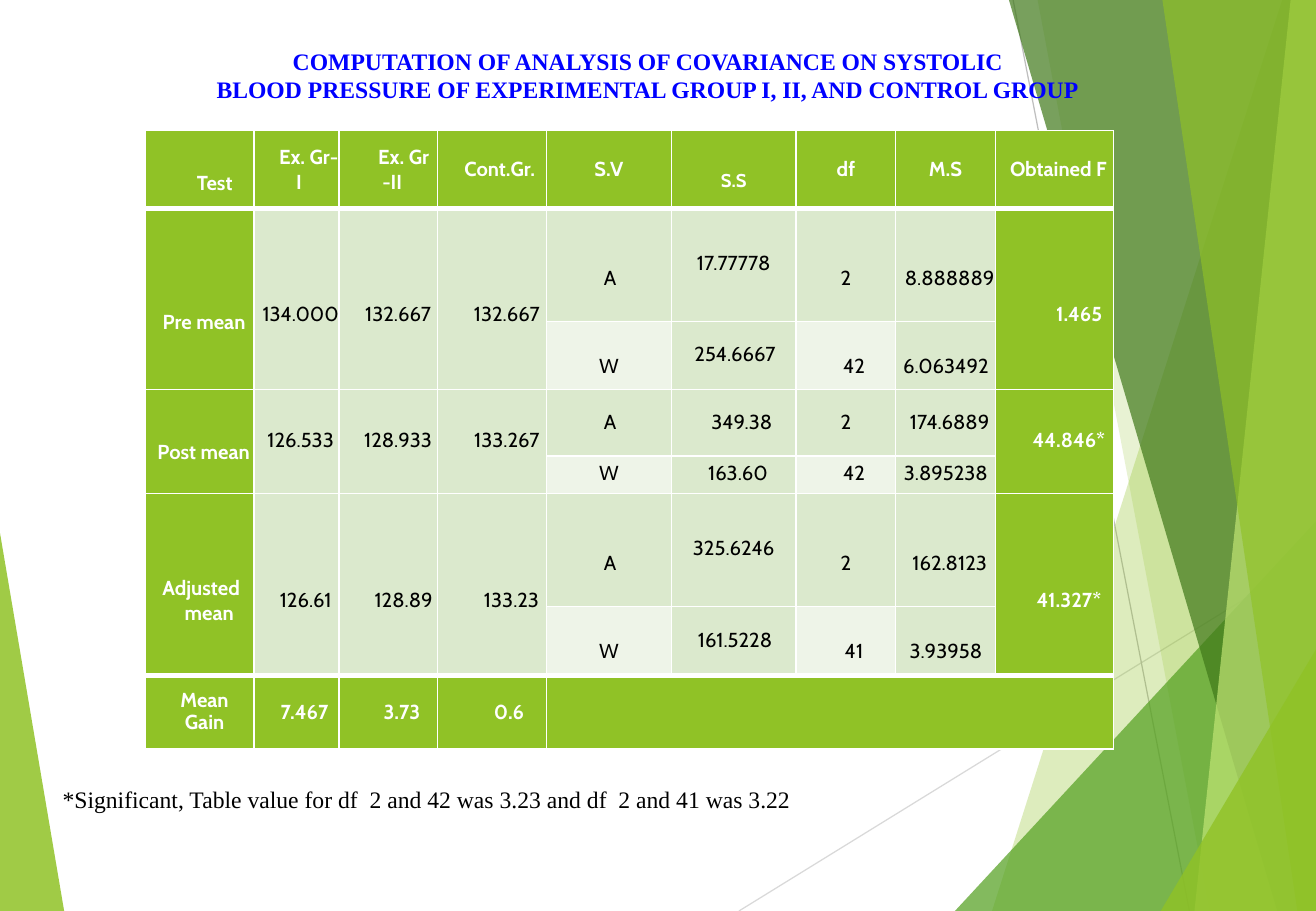
from lxml import etree
from pptx import Presentation
from pptx.dml.color import RGBColor
from pptx.enum.shapes import MSO_CONNECTOR
from pptx.enum.text import MSO_ANCHOR, MSO_AUTO_SIZE, PP_ALIGN
from pptx.oxml.ns import qn
from pptx.util import Pt

CENTER, LEFT = PP_ALIGN.CENTER, PP_ALIGN.LEFT
MIDDLE, TOP = MSO_ANCHOR.MIDDLE, MSO_ANCHOR.TOP
STRAIGHT = MSO_CONNECTOR.STRAIGHT
FIT_SHAPE = MSO_AUTO_SIZE.SHAPE_TO_FIT_TEXT

W, H = 780, 540
SERIF, SANS = "Times New Roman", "Cabin"
COLORS = {
    "green": "90C226", "leaf": "54A021", "forest": "3F7819", "lime": "C0E474",
    "mint": "DBE9CD", "pale": "EEF4E8", "white": "FFFFFF", "black": "000000",
    "blue": "0000FF", "silver": "D9D9D9", "gray": "BFBFBF",
}

# colour, opacity in percent, corner points
LEFT_FACET = ("green", 85, [(0, 316), (38, H), (0, H)])
RIGHT_FACETS = [
    ("green", 30, [(760, 0), (588, H), (W, H), (W, 0)]),
    ("green", 20, [(615, 0), (717, H), (W, H), (W, 0)]),
    ("leaf", 72, [(566, H), (W, 309), (W, H)]),
    ("forest", 70, [(598, 0), (757, H), (W, H), (W, 0)]),
    ("lime", 70, [(765, 0), (708, H), (W, H), (W, 0)]),
    ("green", 65, [(689, 0), (769, H), (W, H), (W, 0)]),
    ("green", 80, [(688, H), (W, 385), (W, H)]),
]
RAYS = [("silver", 438, H, W, 329), ("gray", 600.5, 0, 705, H)]

TITLE = ["COMPUTATION OF ANALYSIS OF COVARIANCE ON SYSTOLIC",
         "BLOOD PRESSURE OF EXPERIMENTAL GROUP I, II, AND CONTROL GROUP"]
FOOTNOTE = "*Significant, Table value for df  2 and 42 was 3.23 and df  2 and 41 was 3.22"

COL_WIDTHS = [64.5, 50.5, 58.5, 64.5, 74, 74, 59, 59, 70]
ROW_HEIGHTS = [46, 67, 40.5, 39.5, 22, 67, 41, 43.5]
LAST_ROW, SV_COL, SS_COL, F_COL = 7, 4, 5, 8
EXACT = 13.3

# text, left indent, first-line indent, top margin
HEADERS = [("Test", 18, 0, 16.5), ("Ex. Gr-I", 3, 11.5, 0), ("Ex. Gr -II", 4.5, 13.5, 0),
           ("Cont.Gr.", 13.5, -4.5, 0), ("S.V", 0, 0, 0), ("S.S", 0, 0, 13.5),
           ("df", 0, 0, 0), ("M.S", 0, 0, 0), ("Obtained F", 25, -20, 0)]
GAINS = [("7.467", 9.5), ("3.73", 16), ("0.6", 20)]

# Each test has a label, its means and F as (text, left indent), and rows A and W
TESTS = [
    {"label": ("Pre mean", 11.5, -6, 27), "top": 18.5, "row_tops": (16, 14), "line": None,
     "means": [("134.000", 5), ("132.667", 11.5), ("132.667", 17.5)], "f": ("1.465", 29.5),
     "a": [("A", 1.5), ("17.77778", 0), ("2", 0), ("8.888889", 5)],
     "w": [("W", 0), ("254.6667", 1.5), ("42", 9.5), ("6.063492", 0.5)]},
    {"label": ("Post mean", 13, -8, 13), "top": 0, "row_tops": (0, 0), "line": EXACT,
     "means": [("126.533", 5), ("128.933", 11.5), ("133.267", 17.5)], "f": ("44.846*", 17.5),
     "a": [("A", 1.5), ("349.38", 9.5), ("2", 0), ("174.6889", 5)],
     "w": [("W", 0), ("163.60", 5), ("42", 9.5), ("3.895238", 0.5)]},
    {"label": ("Adjusted mean", 11.5, -9.5, 19), "top": 18.5, "row_tops": (16, 14), "line": None,
     "means": [("126.61", 11), ("128.89", 18), ("133.23", 23)], "f": ("41.327*", 17.5),
     "a": [("A", 1.5), ("325.6246", 0), ("2", 0), ("162.8123", 5)],
     "w": [("W", 0), ("161.5228", 1.5), ("41", 9.5), ("3.93958", 0.5)]},
]


def rgb(name):
    return RGBColor.from_string(COLORS[name])


def add_facet(s, color, opacity, points):
    first, *rest = [(Pt(x), Pt(y)) for x, y in points]
    builder = s.shapes.build_freeform(*first)
    builder.add_line_segments(rest, close=True)
    sp = builder.convert_to_shape()
    sp.shadow.inherit = False
    sp.line.fill.background()
    sp.fill.solid()
    sp.fill.fore_color.rgb = rgb(color)
    clr = sp._element.spPr.find(".//" + qn("a:srgbClr"))
    etree.SubElement(clr, qn("a:alpha")).set("val", str(opacity * 1000))


def add_ray(s, color, x1, y1, x2, y2):
    ray = s.shapes.add_connector(STRAIGHT, Pt(x1), Pt(y1), Pt(x2), Pt(y2))
    ray.line.color.rgb = rgb(color)
    ray.line.width = Pt(0.75)
    etree.SubElement(ray._element.spPr, qn("a:effectLst"))


def add_run(p, text, font, size, color, bold=False):
    r = p.add_run()
    r.text = text
    r.font.name, r.font.size, r.font.bold = font, Pt(size), bold
    r.font.color.rgb = rgb(color)


def add_text(s, box, lines, color, align=LEFT, anchor=TOP, bold=False, wrap=True):
    tf = s.shapes.add_textbox(*[Pt(v) for v in box]).text_frame
    tf.word_wrap, tf.vertical_anchor, tf.auto_size = wrap, anchor, FIT_SHAPE
    for i, line in enumerate(lines):
        p = tf.add_paragraph() if i else tf.paragraphs[0]
        p.alignment = align
        add_run(p, line, SERIF, 14, color, bold)


def style_cell(cell, row, col):
    """Fill by place in the grid; white borders, thick beside the first and last rows."""
    if row in (0, LAST_ROW) or col in (0, F_COL):
        color = "green"
    else:
        color = "pale" if row in (2, 4, 6) and col in (4, 6) else "mint"
    cell.fill.solid()
    cell.fill.fore_color.rgb = rgb(color)
    widths = {"a:lnL": 1, "a:lnR": 1,
              "a:lnT": 3 if row in (1, LAST_ROW) else 1,
              "a:lnB": 3 if row in (0, LAST_ROW - 1) else 1}
    for i, (tag, width) in enumerate(widths.items()):
        ln = etree.Element(qn(tag), w=str(Pt(width)))
        fill = etree.SubElement(ln, qn("a:solidFill"))
        etree.SubElement(fill, qn("a:srgbClr")).set("val", COLORS["white"])
        cell._tc.get_or_add_tcPr().insert(i, ln)


def fill_cell(table, row, col, text, left=0, first=0, top=0, line=None, size=12):
    cell = table.cell(row, col)
    cell.margin_left = cell.margin_right = cell.margin_bottom = 0
    cell.margin_top = Pt(top)
    cell.vertical_anchor = MIDDLE
    strong = row in (0, LAST_ROW) or col in (0, F_COL)
    for i, part in enumerate(text.split("\n")):
        p = cell.text_frame.add_paragraph() if i else cell.text_frame.paragraphs[0]
        p.alignment = CENTER
        if line:
            p.line_spacing = Pt(line)
        pPr = p._p.get_or_add_pPr()
        pPr.set("marL", str(Pt(left)))
        pPr.set("indent", str(Pt(first)))
        add_run(p, part, SANS, size, "white" if strong else "black", strong)


def fill_test(table, row, test):
    """Fill the two rows of one test, with label, means and F merged over both."""
    for col in (0, 1, 2, 3, F_COL):
        table.cell(row, col).merge(table.cell(row + 1, col))
    fill_cell(table, row, 0, *test["label"])
    for col, (text, left) in zip((1, 2, 3, F_COL), test["means"] + [test["f"]]):
        fill_cell(table, row, col, text, left, top=test["top"], line=test["line"])
    for i, key in enumerate("aw"):
        for col, (text, left) in enumerate(test[key], SV_COL):
            is_ss = col == SS_COL
            fill_cell(table, row + i, col, text, left,
                      top=0 if is_ss else test["row_tops"][i],
                      line=EXACT if is_ss or key == "w" else test["line"])


def add_ancova_table(s):
    frame = s.shapes.add_table(len(ROW_HEIGHTS), len(COL_WIDTHS), Pt(86), Pt(77.5),
                               Pt(sum(COL_WIDTHS)), Pt(sum(ROW_HEIGHTS)))
    table = frame.table
    table.first_row = table.horz_banding = False
    for column, width in zip(table.columns, COL_WIDTHS):
        column.width = Pt(width)
    for i, height in enumerate(ROW_HEIGHTS):
        table.rows[i].height = Pt(height)
        for j in range(len(COL_WIDTHS)):
            style_cell(table.cell(i, j), i, j)
    for col, header in enumerate(HEADERS):
        fill_cell(table, 0, col, *header, size=11 if col == SS_COL else 12)
    for i, test in enumerate(TESTS):
        fill_test(table, 1 + 2 * i, test)
    fill_cell(table, LAST_ROW, 0, "Mean\nGain", 6, line=EXACT)
    for col, (text, left) in enumerate(GAINS, 1):
        fill_cell(table, LAST_ROW, col, text, left)
    table.cell(LAST_ROW, SV_COL).merge(table.cell(LAST_ROW, F_COL))


def main():
    prs = Presentation()
    prs.slide_width, prs.slide_height = Pt(W), Pt(H)
    s = prs.slides.add_slide(prs.slide_layouts[6])
    add_facet(s, *LEFT_FACET)
    for ray in RAYS:
        add_ray(s, *ray)
    for facet in RIGHT_FACETS:
        add_facet(s, *facet)
    add_text(s, (30, 462, 504, 24.5), [FOOTNOTE], "black")
    add_text(s, (120, 24, 528, 41), TITLE, "blue", CENTER, MIDDLE, bold=True, wrap=False)
    add_ancova_table(s)
    prs.save("out.pptx")


if __name__ == "__main__":
    main()
